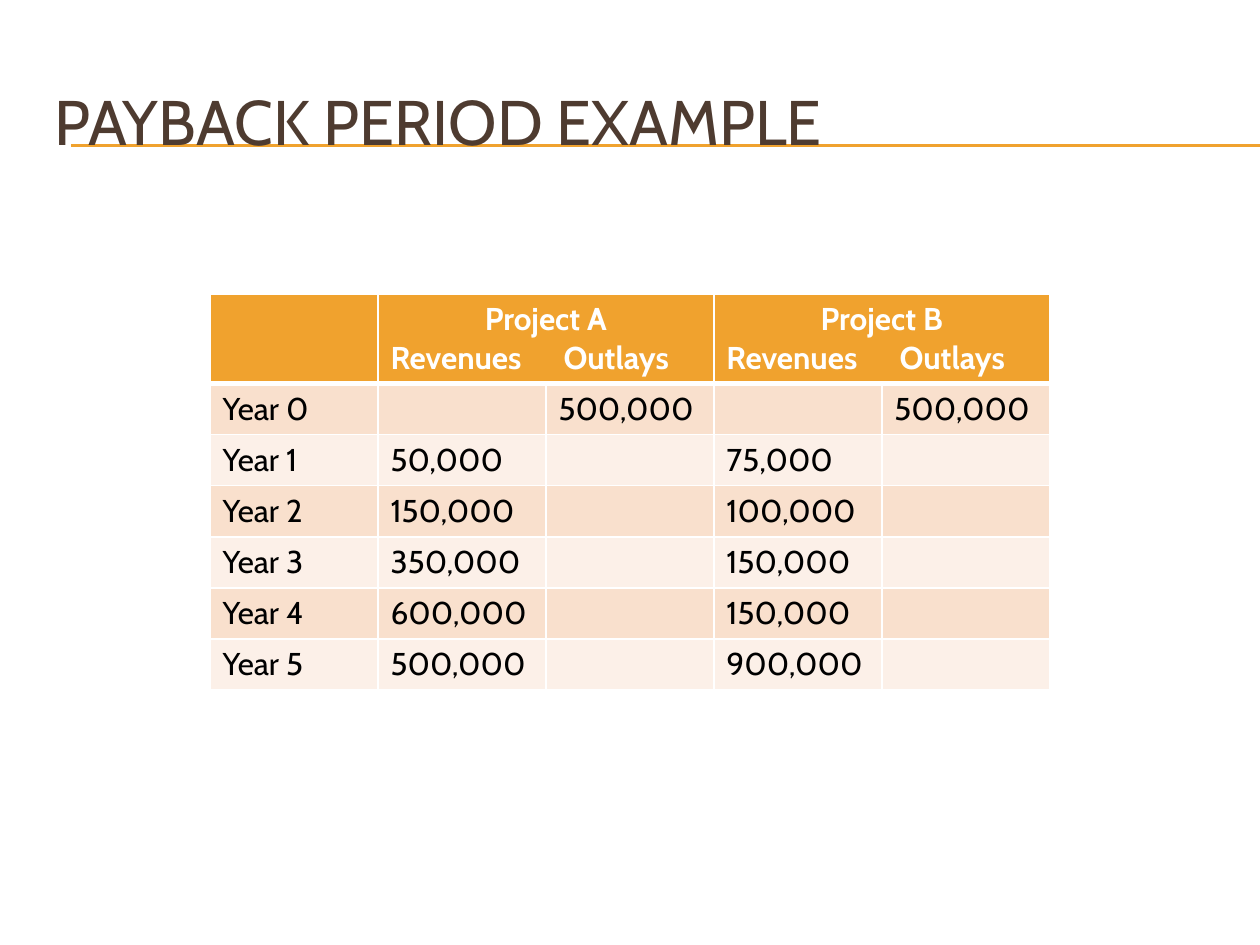
from lxml import etree
from pptx import Presentation
from pptx.dml.color import RGBColor
from pptx.enum.shapes import MSO_CONNECTOR
from pptx.enum.text import MSO_ANCHOR, MSO_AUTO_SIZE, PP_ALIGN
from pptx.oxml.ns import qn
from pptx.util import Pt

STRAIGHT = MSO_CONNECTOR.STRAIGHT
MIDDLE = MSO_ANCHOR.MIDDLE
NO_FIT = MSO_AUTO_SIZE.NONE
LEFT, CENTER = PP_ALIGN.LEFT, PP_ALIGN.CENTER

YEARS = [
    ("Year 0", "", "500,000", "", "500,000"),
    ("Year 1", "50,000", "", "75,000", ""),
    ("Year 2", "150,000", "", "100,000", ""),
    ("Year 3", "350,000", "", "150,000", ""),
    ("Year 4", "600,000", "", "150,000", ""),
    ("Year 5", "500,000", "", "900,000", ""),
]


def color(value):
    return RGBColor.from_string(value)


class SlideBuilder:
    font = "Cabin"
    accent = "F0A22E"
    title_color = "4E3B30"
    white = "FFFFFF"
    black = "000000"
    bands = ("F9E0CD", "FCF0E8")

    def __init__(self, page):
        self.page = page

    def add_span(self, para, text, size, shade, bold=False, align=LEFT):
        para.alignment = align
        span = para.add_run()
        span.text = text
        span.font.name = self.font
        span.font.size = Pt(size)
        span.font.bold = bold
        span.font.color.rgb = color(shade)

    def title(self, text, left, top, width, height):
        box = self.page.shapes.title
        box.left, box.top = Pt(left), Pt(top)
        box.width, box.height = Pt(width), Pt(height)
        frame = box.text_frame
        frame.word_wrap = True
        frame.auto_size = NO_FIT
        frame.vertical_anchor = MIDDLE
        self.add_span(frame.paragraphs[0], text, 36, self.title_color)

    def rule(self, left, right, y):
        line = self.page.shapes.add_connector(STRAIGHT, Pt(left), Pt(y), Pt(right), Pt(y))
        line.line.color.rgb = color(self.accent)
        line.line.width = Pt(0.75)
        etree.SubElement(line.element.spPr, qn("a:effectLst"))
        self.page.shapes.title.element.addprevious(line.element)

    def style_cell(self, cell, fill, top=1, bottom=1):
        properties = cell._tc.get_or_add_tcPr()
        for side, width in (("L", 1), ("R", 1), ("T", top), ("B", bottom)):
            border = etree.SubElement(properties, qn(f"a:ln{side}"), w=str(Pt(width)))
            solid = etree.SubElement(border, qn("a:solidFill"))
            etree.SubElement(solid, qn("a:srgbClr"), val=self.white)
        cell.fill.solid()
        cell.fill.fore_color.rgb = color(fill)

    def project_header(self, cell, name):
        heading = cell.text_frame.paragraphs[0]
        self.add_span(heading, name, 18, self.white, True, CENTER)
        labels = cell.text_frame.add_paragraph()
        tabs = etree.SubElement(labels._p.get_or_add_pPr(), qn("a:tabLst"))
        etree.SubElement(tabs, qn("a:tab"), pos=str(Pt(98.9)), algn="l")
        self.add_span(labels, "Revenues\tOutlays", 18, self.white, True)

    def cash_flow_table(self, left, top, column_width, header_height, row_height):
        rows, columns = len(YEARS) + 1, len(YEARS[0])
        height = header_height + row_height * len(YEARS)
        frame = self.page.shapes.add_table(
            rows, columns, Pt(left), Pt(top), Pt(column_width * columns), Pt(height)
        )
        table = frame.table
        for column in table.columns:
            column.width = Pt(column_width)
        for row in table.rows:
            row.height = Pt(row_height)
        table.rows[0].height = Pt(header_height)

        for index in range(columns):
            self.style_cell(table.cell(0, index), self.accent, bottom=3)
        for index, name in ((1, "Project A"), (3, "Project B")):
            table.cell(0, index).merge(table.cell(0, index + 1))
            self.project_header(table.cell(0, index), name)

        for number, values in enumerate(YEARS):
            for index, value in enumerate(values):
                cell = table.cell(number + 1, index)
                self.style_cell(cell, self.bands[number % 2], top=1 if number else 3)
                para = cell.text_frame.paragraphs[0]
                if value:
                    self.add_span(para, value, 18, self.black)
                else:
                    para.font.size = Pt(18)


def main():
    deck = Presentation()
    deck.slide_width, deck.slide_height = Pt(720), Pt(540)
    builder = SlideBuilder(deck.slides.add_slide(deck.slide_layouts[5]))
    builder.title("PAYBACK PERIOD EXAMPLE", 24, 36, 684, 66)
    for y in (82.8, 83.5):
        builder.rule(40.5, 720, y)
    builder.cash_flow_table(120, 168, 96, 50.4, 29.2)
    deck.save("out.pptx")


if __name__ == "__main__":
    main()
